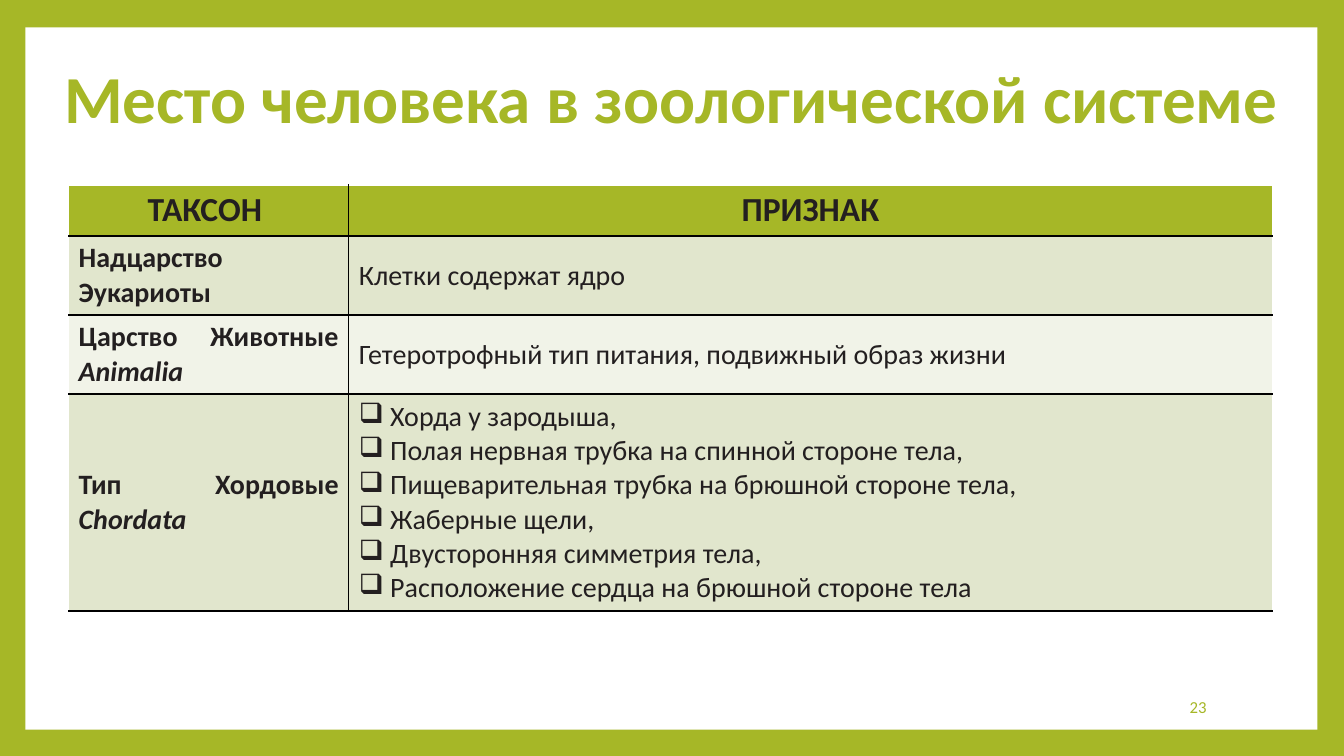
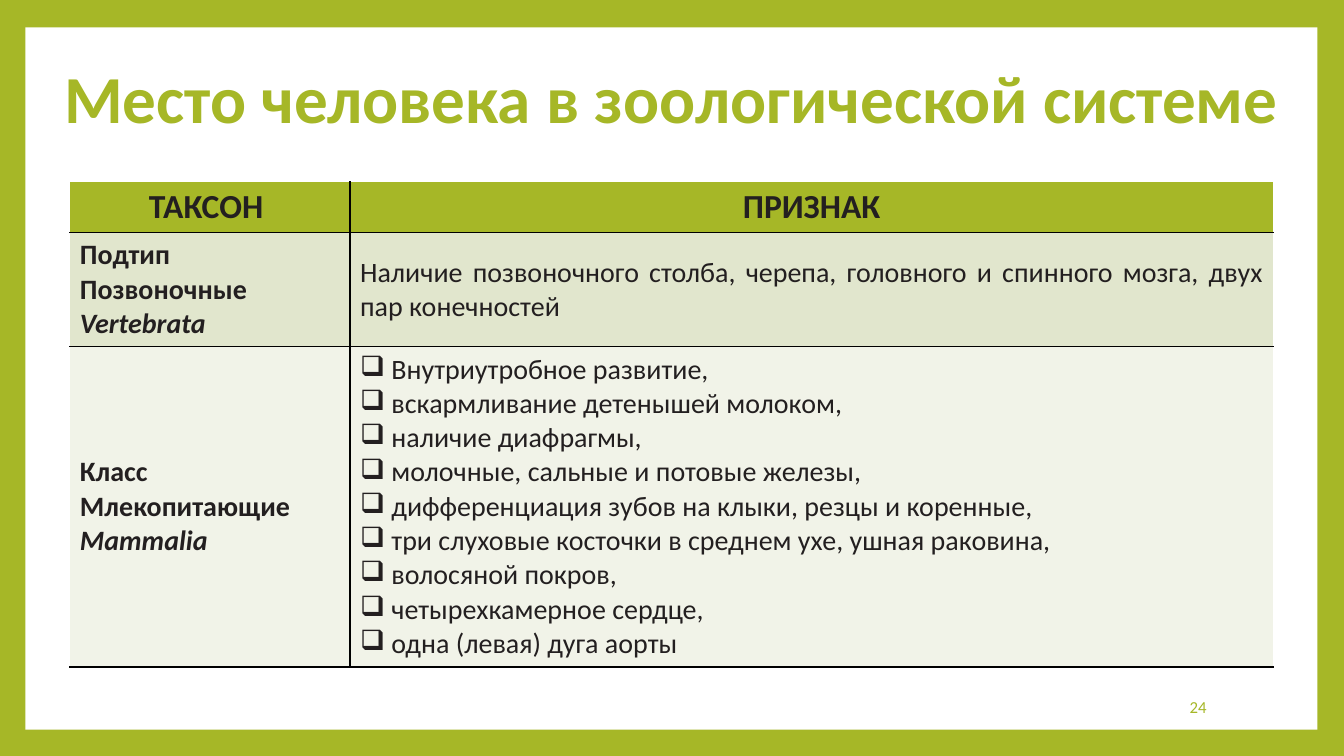
from lxml import etree
from pptx import Presentation
from pptx.dml.color import RGBColor
from pptx.enum import shapes, text
from pptx.oxml import ns
from pptx.util import Cm, Pt

GREEN, WHITE, BLACK, INK = "A6B727", "FFFFFF", "000000", "231F20"
BANDS = ("E1E6CD", "F1F3E8")
FONT = "Calibri"
TITLE = "Место человека в зоологической системе"
HEADER = ("ТАКСОН ", "ПРИЗНАК")
FIRST_NUMBER = 23
PANEL_BOX = (0.64, 0.69, 32.56, 17.7)
TITLE_BOX = (0.64, 1.9, 32.56, 1.35)
NUMBER_BOX = (25.91, 17.3, 4.75, 1.02)
COLUMN_WIDTHS = (7.06, 23.27)
HEADER_HEIGHT, LINE_HEIGHT, CELL_PADDING = 1.27, 0.87, 0.25

SLIDES = [
    ((1.73, 4.66), [
        ("Надцарство Эукариоты", 2, ["Клетки содержат ядро"]),
        ("Царство Животные\vAnimalia", 2,
         ["Гетеротрофный тип питания, подвижный образ жизни"]),
        ("Тип Хордовые\vChordata", 6, [
            "Хорда у зародыша,",
            "Полая нервная трубка на спинной стороне тела,",
            "Пищеварительная трубка на брюшной стороне тела,",
            "Жаберные щели,",
            "Двусторонняя симметрия тела,",
            "Расположение сердца на брюшной стороне тела",
        ]),
    ]),
    ((1.76, 4.58), [
        ("Подтип Позвоночные\vVertebrata", 3,
         ["Наличие позвоночного столба, черепа, головного и спинного мозга, "
          "двух пар конечностей"]),
        ("Класс Млекопитающие\vMammalia", 9, [
            "Внутриутробное развитие,",
            "вскармливание детенышей молоком,",
            "наличие диафрагмы,",
            "молочные, сальные и потовые железы,",
            "дифференциация зубов на клыки, резцы и коренные,",
            "три слуховые косточки в среднем ухе, ушная раковина,",
            "волосяной покров,",
            "четырехкамерное сердце,",
            "одна (левая) дуга аорты",
        ]),
    ]),
]


def paint(color_format, color):
    color_format.rgb = RGBColor.from_string(color)


def fill_with(fill, color):
    fill.solid()
    paint(fill.fore_color, color)


def lengths(box):
    return [Cm(value) for value in box]


def format_paragraph(paragraph, size, color, align, bold=False):
    paragraph.alignment = align
    for run in paragraph.runs:
        run.font.name = FONT
        run.font.size = Pt(size)
        run.font.bold = bold
        paint(run.font.color, color)


def add_bullet(paragraph):
    properties = paragraph._p.get_or_add_pPr()
    properties.set("marL", str(Cm(0.79)))
    properties.set("indent", str(Cm(-0.79)))
    etree.SubElement(properties, ns.qn("a:buChar")).set("char", "❑")


def set_borders(cell, colors):
    properties = cell._tc.get_or_add_tcPr()
    for index, (side, color) in enumerate(zip("LRTB", colors)):
        line = etree.Element(ns.qn(f"a:ln{side}"), w=str(Pt(1)))
        solid = etree.SubElement(line, ns.qn("a:solidFill"))
        etree.SubElement(solid, ns.qn("a:srgbClr")).set("val", color)
        properties.insert(index, line)


def fill_cell(cell, content, size, align, bold):
    cell.vertical_anchor = text.MSO_ANCHOR.MIDDLE
    cell.text_frame.text = content
    for paragraph in cell.text_frame.paragraphs:
        format_paragraph(paragraph, size, INK, align, bold)


def style_table(table):
    table.first_row = table.horz_banding = False
    for row_index, row in enumerate(table.rows):
        color = BANDS[(row_index - 1) % 2] if row_index else GREEN
        for column_index, cell in enumerate(row.cells):
            fill_with(cell.fill, color)
            left, right = (BLACK, WHITE) if column_index else (WHITE, BLACK)
            top = BLACK if row_index else WHITE
            set_borders(cell, (left, right, top, BLACK))


def add_taxon_table(slide, corner, taxa):
    heights = [HEADER_HEIGHT] + [lines * LINE_HEIGHT + CELL_PADDING for _, lines, _ in taxa]
    box = (*corner, sum(COLUMN_WIDTHS), sum(heights))
    table = slide.shapes.add_table(len(heights), len(COLUMN_WIDTHS), *lengths(box)).table
    for column, width in zip(table.columns, COLUMN_WIDTHS):
        column.width = Cm(width)
    for row, height in zip(table.rows, heights):
        row.height = Cm(height)
    for index, heading in enumerate(HEADER):
        fill_cell(table.cell(0, index), heading, 24, text.PP_ALIGN.CENTER, True)
    for index, (taxon, _, features) in enumerate(taxa, 1):
        name, feature_cell = table.cell(index, 0), table.cell(index, 1)
        fill_cell(name, taxon, 20, text.PP_ALIGN.JUSTIFY, True)
        for run in name.text_frame.paragraphs[0].runs[1:]:
            run.font.italic = True
        fill_cell(feature_cell, "\n".join(features), 20, text.PP_ALIGN.JUSTIFY, False)
        if len(features) > 1:
            for paragraph in feature_cell.text_frame.paragraphs:
                add_bullet(paragraph)
    style_table(table)


def add_title(slide, box):
    title = slide.shapes.title
    title.left, title.top, title.width, title.height = lengths(box)
    title.text_frame.text = TITLE
    title.text_frame.vertical_anchor = text.MSO_ANCHOR.MIDDLE
    title.text_frame.auto_size = text.MSO_AUTO_SIZE.NONE
    paragraph = title.text_frame.paragraphs[0]
    paragraph.line_spacing = 0.9
    format_paragraph(paragraph, 48, GREEN, text.PP_ALIGN.CENTER, True)


def add_number(slide, box, number):
    frame = slide.shapes.add_textbox(*lengths(box)).text_frame
    frame.word_wrap = True
    frame.vertical_anchor = text.MSO_ANCHOR.MIDDLE
    frame.text = str(number)
    format_paragraph(frame.paragraphs[0], 12, GREEN, text.PP_ALIGN.RIGHT)


def add_panel(slide, box):
    panel = slide.shapes.add_shape(shapes.MSO_SHAPE.RECTANGLE, *lengths(box))
    panel.shadow.inherit = False
    fill_with(panel.fill, WHITE)
    panel.line.fill.background()
    slide.shapes._spTree.insert(2, panel._element)


def build_slide(presentation, number, corner, taxa):
    slide = presentation.slides.add_slide(presentation.slide_layouts[5])
    add_panel(slide, PANEL_BOX)
    add_title(slide, TITLE_BOX)
    add_taxon_table(slide, corner, taxa)
    add_number(slide, NUMBER_BOX, number)


def main():
    presentation = Presentation()
    presentation.slide_width, presentation.slide_height = Cm(33.87), Cm(19.05)
    fill_with(presentation.slide_master.background.fill, GREEN)
    for number, (corner, taxa) in enumerate(SLIDES, FIRST_NUMBER):
        build_slide(presentation, number, corner, taxa)
    presentation.save("out.pptx")


if __name__ == "__main__":
    main()
